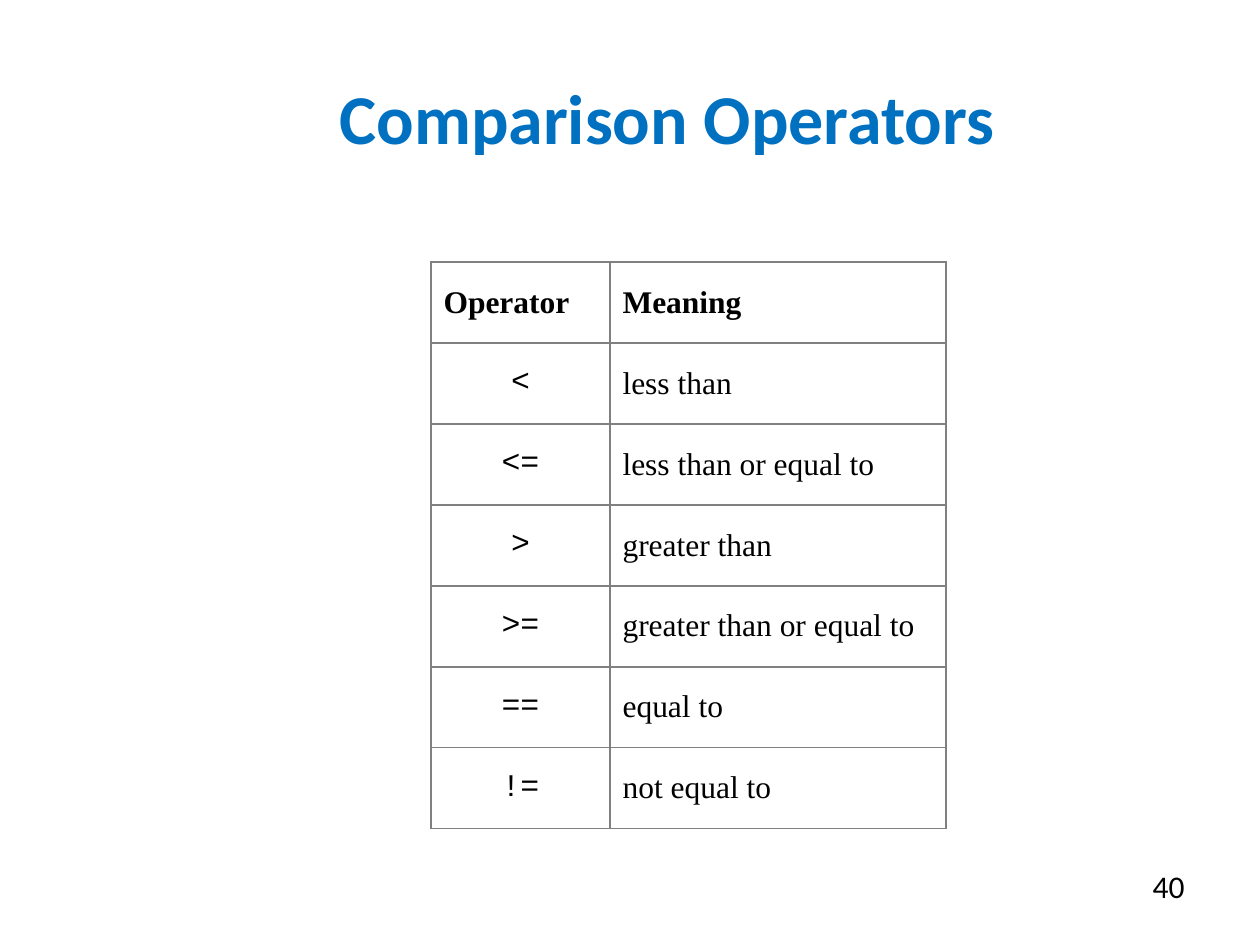
from lxml.etree import SubElement
from pptx import Presentation
from pptx.dml.color import RGBColor
from pptx.enum.text import MSO_ANCHOR, PP_ALIGN
from pptx.oxml.ns import qn
from pptx.util import Emu, Pt

EMU_PER_PX = 914400 // 126
BLACK = "000000"
TITLE_BLUE = "0070C0"
BORDER_GREY = "808080"

COLUMN_WIDTHS = (179, 336)
ROW_HEIGHT = 81
HEADER = ("Operator", "Meaning")
OPERATORS = (
    ("<", "less than"),
    ("<=", "less than or equal to"),
    (">", "greater than"),
    (">=", "greater than or equal to"),
    ("==", "equal to"),
    ("!=", "not equal to"),
)


def px(length):
    return Emu(length * EMU_PER_PX)


def color(value):
    return RGBColor.from_string(value)


def write(text_frame, text, font_name, size, align, bold=False, text_color=BLACK):
    paragraph = text_frame.paragraphs[0]
    paragraph.alignment = align
    run = paragraph.add_run()
    run.text = text
    run.font.name = font_name
    run.font.size = Pt(size)
    run.font.bold = bold
    run.font.color.rgb = color(text_color)


def add_text(slide, left, top, width, height, anchor, *text_style, **options):
    shape = slide.shapes.add_textbox(px(left), px(top), px(width), px(height))
    text_frame = shape.text_frame
    text_frame.word_wrap = True
    text_frame.vertical_anchor = anchor
    write(text_frame, *text_style, **options)


def add_borders(cell):
    properties = cell._tc.get_or_add_tcPr()
    for side in ("a:lnL", "a:lnR", "a:lnT", "a:lnB"):
        line = SubElement(properties, qn(side), w=str(Pt(1)))
        fill = SubElement(line, qn("a:solidFill"))
        SubElement(fill, qn("a:srgbClr"), val=BORDER_GREY)


def add_operator_table(slide, left, top):
    rows = (HEADER, *OPERATORS)
    table = slide.shapes.add_table(
        len(rows), len(COLUMN_WIDTHS), px(left), px(top),
        px(sum(COLUMN_WIDTHS)), px(ROW_HEIGHT * len(rows)),
    ).table
    table.first_row = False
    table.horz_banding = False
    for column, width in zip(table.columns, COLUMN_WIDTHS):
        column.width = px(width)
    for row_index, texts in enumerate(rows):
        table.rows[row_index].height = px(ROW_HEIGHT)
        is_header = row_index == 0
        for column_index, text in enumerate(texts):
            cell = table.cell(row_index, column_index)
            add_borders(cell)
            cell.fill.background()
            cell.vertical_anchor = MSO_ANCHOR.MIDDLE
            is_symbol = column_index == 0 and not is_header
            font_name = "Courier New" if is_symbol else "Times New Roman"
            align = PP_ALIGN.CENTER if is_symbol else PP_ALIGN.LEFT
            write(cell.text_frame, text, font_name, 18, align, bold=is_header)


def main():
    presentation = Presentation()
    presentation.slide_width = px(1260)
    presentation.slide_height = px(945)
    slide = presentation.slides.add_slide(presentation.slide_layouts[6])
    add_text(slide, 231, 38, 872, 158, MSO_ANCHOR.MIDDLE, "Comparison Operators",
             "Calibri", 40, PP_ALIGN.CENTER, bold=True, text_color=TITLE_BLUE)
    add_operator_table(slide, 431, 262)
    add_text(slide, 903, 861, 294, 66, MSO_ANCHOR.TOP, "40",
             "Calibri", 18, PP_ALIGN.RIGHT)
    presentation.save("out.pptx")


if __name__ == "__main__":
    main()
